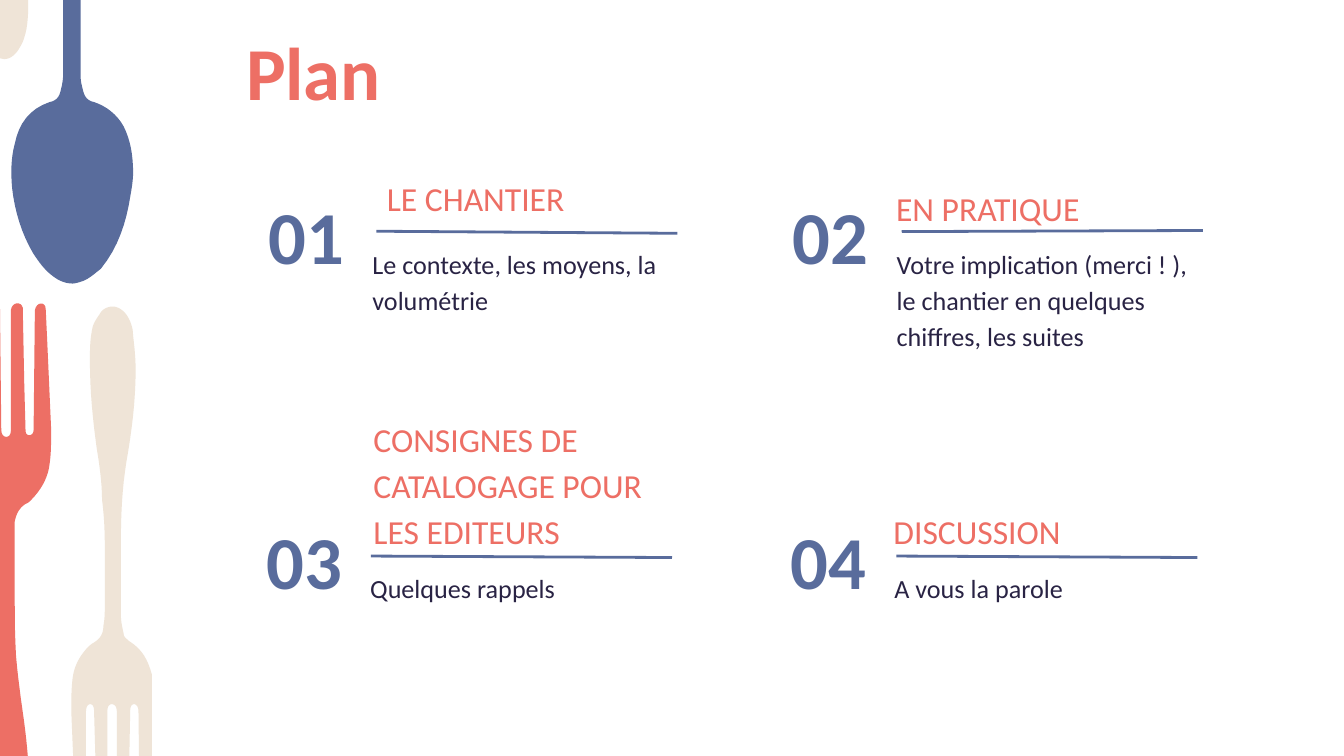
import pptx
import pptx.dml.color
import pptx.enum.shapes
import pptx.enum.text
import pptx.oxml.ns
import pptx.util
import lxml.etree

Pt = pptx.util.Pt
Align = pptx.enum.text.PP_ALIGN
Anchor = pptx.enum.text.MSO_ANCHOR

COLORS = {"coral": "ED6F65", "blue": "596C9C", "beige": "EFE4D7", "ink": "292344", "white": "FFFFFF"}

SPOON = [
    (33.8, 0), (33.8, 40.3), (33.8, 43.2, 33.1, 46.1, 32.4, 49),
    (31.7, 51.8, 30.2, 54, 26.6, 54.7), (15.8, 58.3, 10.1, 66.2, 7.9, 77),
    (5.8, 85, 5.8, 92.9, 6.5, 100.8), (7.9, 113, 11.5, 125.3, 18, 136.1),
    (20.9, 140.4, 23.8, 144.7, 28.8, 148.3), (31.7, 150.5, 35.3, 151.9, 38.9, 151.9),
    (40.3, 151.9, 42.5, 151.2, 44.6, 150.5), (48.2, 149, 51.1, 146.2, 54, 144),
    (63.4, 132.5, 67.7, 118.8, 69.8, 105.1), (70.6, 100.8, 71.3, 95.8, 71.3, 92.9),
    (71.3, 82.8, 69.8, 74.9, 66.2, 67.7), (62.6, 61.2, 56.9, 56.9, 50.4, 54.7),
    (46.8, 54, 45.4, 51.8, 44.6, 49), (43.9, 46.1, 43.2, 43.9, 43.2, 41), (43.2, 0),
]
HANDLE_END = [
    (0, 0), (15.1, 0), (15.1, 7.2, 15.1, 13.7, 13, 20.2),
    (12.2, 23, 10.8, 25.2, 9.4, 27.4), (7.2, 30.2, 5, 31.7, 2.2, 31.7), (0, 31.3),
]
FORK_DOWN = [
    (60.5, 164.2), (62.6, 164.2, 65.5, 165.6, 67.7, 168.5),
    (69.8, 171.4, 71.3, 175.7, 71.3, 179.3), (72, 185.8, 72.7, 191.5, 72.7, 198),
    (72.7, 214.6, 70.6, 231.1, 67.7, 247.7), (65.5, 261.4, 64.8, 275, 64.8, 289.4),
    (64.8, 329.8), (64.8, 332.6, 65.5, 336.2, 66.2, 339.1),
    (66.2, 341.3, 67.7, 342, 69.1, 343.4), (76.3, 347.8, 79.2, 353.5, 81.4, 361.4),
    (81.4, 405), (74.5, 405), (74.2, 380.9), (74.2, 376.1, 69.8, 376.1, 69.8, 380.2),
    (69.3, 405), (62.6, 405), (62.6, 380.9), (62.6, 376.1, 57.6, 376.1, 57.6, 380.2),
    (57.6, 405), (51.1, 405), (50.4, 380.2), (50.4, 376.1, 46.1, 376.1, 46.1, 380.9),
    (46.1, 405), (39.2, 405), (38.2, 380.9), (38.2, 375.1, 38.2, 369.4, 38.9, 363.6),
    (39.6, 357.8, 41.8, 352.8, 46.1, 347.8), (47.5, 346.3, 49, 344.9, 50.4, 344.2),
    (54, 342, 55.4, 339.1, 55.4, 335.5), (56.2, 331.2, 56.2, 326.9, 56.2, 323.3),
    (56.2, 300.2), (56.2, 289.4, 56.2, 278.6, 54.7, 267.8),
    (54.7, 258.5, 53.3, 249.1, 51.8, 239.8), (49.7, 224.6, 48.2, 209.5, 48.2, 193.7),
    (48.2, 187.2, 48.2, 181.4, 49.7, 175), (50.4, 172.8, 51.8, 170.6, 53.3, 168.5),
    (54.7, 165.6, 57.6, 164.2, 60.5, 164.2),
]
FORK_UP = [
    (0, 165.6), (0.7, 230.4), (0.7, 235.2, 5.8, 235.2, 5.8, 231.1), (5.8, 166.3),
    (6.5, 161.5, 11.5, 161.5, 12.2, 164.9), (13, 205.2), (13.7, 231.1),
    (13.7, 234, 18, 234, 18, 230.4), (18.7, 166.3), (19.4, 161.5, 24.5, 161.5, 24.5, 165.6),
    (25.2, 180.7), (27.4, 230.4), (27.4, 236.2, 27.4, 242.6, 26.6, 248.4),
    (25.9, 254.9, 23, 260.6, 18.7, 265.7), (17.3, 267.1, 15.8, 269.3, 13.7, 270),
    (10.1, 272.2, 8.6, 275.8, 7.9, 279.4), (7.9, 317.5),
    (7.9, 328.3, 7.9, 339.8, 8.6, 351.4), (9.4, 361.4, 10.8, 371.5, 12.2, 381.6),
    (13.4, 389.4, 14.2, 397, 14.9, 405), (0, 405),
]

SECTIONS = [
    ("LE CHANTIER", (200.2, 85), "Le contexte, les moyens, la volumétrie", (201.6, 123.9, 125)),
    ("EN PRATIQUE", (473, 90), "Votre implication (merci ! ), le chantier en quelques chiffres, les suites",
     (483.1, 124.1, 123.5)),
    ("CONSIGNES DE CATALOGAGE POUR LES EDITEURS", (193, 213.8), "Quelques rappels", (198.7, 297.9, 298.7)),
    ("DISCUSSION", (471.6, 263.5), "A vous la parole", (480.2, 297.9, 298.7)),
]


class PlanSlide:
    font = "Calibri"
    inset = Pt(7.2)

    def __init__(self, prs):
        self.s = prs.slides.add_slide(prs.slide_layouts[4])
        self.s.background.fill.solid()
        self.s.background.fill.fore_color.rgb = self.color("white")

    def color(self, name):
        return pptx.dml.color.RGBColor.from_string(COLORS[name])

    def outline(self, segments, color):
        points = [segments[0]]
        for seg in segments[1:]:
            if len(seg) == 2:
                points.append(seg)
                continue
            x0, y0 = points[-1]
            x1, y1, x2, y2, x3, y3 = seg
            for t in (k / 8 for k in range(1, 9)):
                a, b, c, d = (1 - t) ** 3, 3 * t * (1 - t) ** 2, 3 * t * t * (1 - t), t ** 3
                points.append((a * x0 + b * x1 + c * x2 + d * x3, a * y0 + b * y1 + c * y2 + d * y3))
        points = [(Pt(x), Pt(y)) for x, y in points]
        fb = self.s.shapes.build_freeform(*points[0])
        fb.add_line_segments(points[1:], close=True)
        sp = fb.convert_to_shape()
        sp.shadow.inherit = False
        sp.fill.solid()
        sp.fill.fore_color.rgb = self.color(color)
        sp.line.fill.background()

    def set_text(self, sp, box, text, size, color, bold=False, align=Align.LEFT, anchor=Anchor.TOP,
                 spacing=1, after=0):
        sp.left, sp.top, sp.width, sp.height = (Pt(v) for v in box)
        tf = sp.text_frame
        tf.word_wrap = True
        tf.auto_size = pptx.enum.text.MSO_AUTO_SIZE.NONE
        tf.vertical_anchor = anchor
        tf.margin_left = tf.margin_top = tf.margin_right = tf.margin_bottom = self.inset
        p = tf.paragraphs[0]
        p.text = text
        p.alignment = align
        p.line_spacing = spacing
        p.space_before, p.space_after = Pt(0), Pt(after)
        p.font.name, p.font.size, p.font.bold = self.font, Pt(size), bold
        p.font.color.rgb = self.color(color)
        return p

    def title(self, text, box):
        self.set_text(self.s.shapes.title, box, text, 40, "coral", bold=True)

    def textbox(self, text, box, *style, **options):
        sp = self.s.shapes.add_textbox(0, 0, 0, 0)
        self.set_text(sp, box, text, *style, **options)

    def body(self, idx, text, box):
        p = self.set_text(self.s.placeholders[idx], box, text, 14, "ink", spacing=1.15, after=16)
        pPr = p._p.get_or_add_pPr()
        pPr.set("marL", "0")
        pPr.set("indent", "0")
        bullet = lxml.etree.Element(pptx.oxml.ns.qn("a:buNone"))
        pPr.find(pptx.oxml.ns.qn("a:defRPr")).addprevious(bullet)

    def rule(self, x, y1, y2):
        straight = pptx.enum.shapes.MSO_CONNECTOR.STRAIGHT
        cxn = self.s.shapes.add_connector(straight, Pt(x), Pt(y1), Pt(x + 161.3), Pt(y2))
        cxn.line.color.rgb = self.color("blue")
        cxn.line.width = Pt(1.5)
        lxml.etree.SubElement(cxn._element.spPr, pptx.oxml.ns.qn("a:effectLst"))


def main():
    prs = pptx.Presentation()
    prs.slide_width, prs.slide_height = Pt(720), Pt(405)
    plan = PlanSlide(prs)
    for segments, color in ((SPOON, "blue"), (HANDLE_END, "beige"), (FORK_DOWN, "beige"), (FORK_UP, "coral")):
        plan.outline(segments, color)
    plan.title("Plan", (124.6, 6.5, 509.8, 52.6))
    for i, (heading, corner, text, rule) in enumerate(SECTIONS):
        row, col = divmod(i, 2)
        x, y = 135.4 + 280.8 * col - 1.2 * row, 106.6 + 174 * row
        plan.textbox(f"{i + 1:02}", (x, y, 57.6, 50.4), 40, "blue", bold=True,
                     align=Align.CENTER, anchor=Anchor.BOTTOM)
        plan.textbox(heading, (*corner, 172.8, 34.6), 18, "coral", spacing=1.15, after=16)
        plan.body(i + 1, text, (x + 56.9, y + 16.5, 172.8, 57.6))
        plan.rule(*rule)
    prs.save("out.pptx")


if __name__ == "__main__":
    main()
